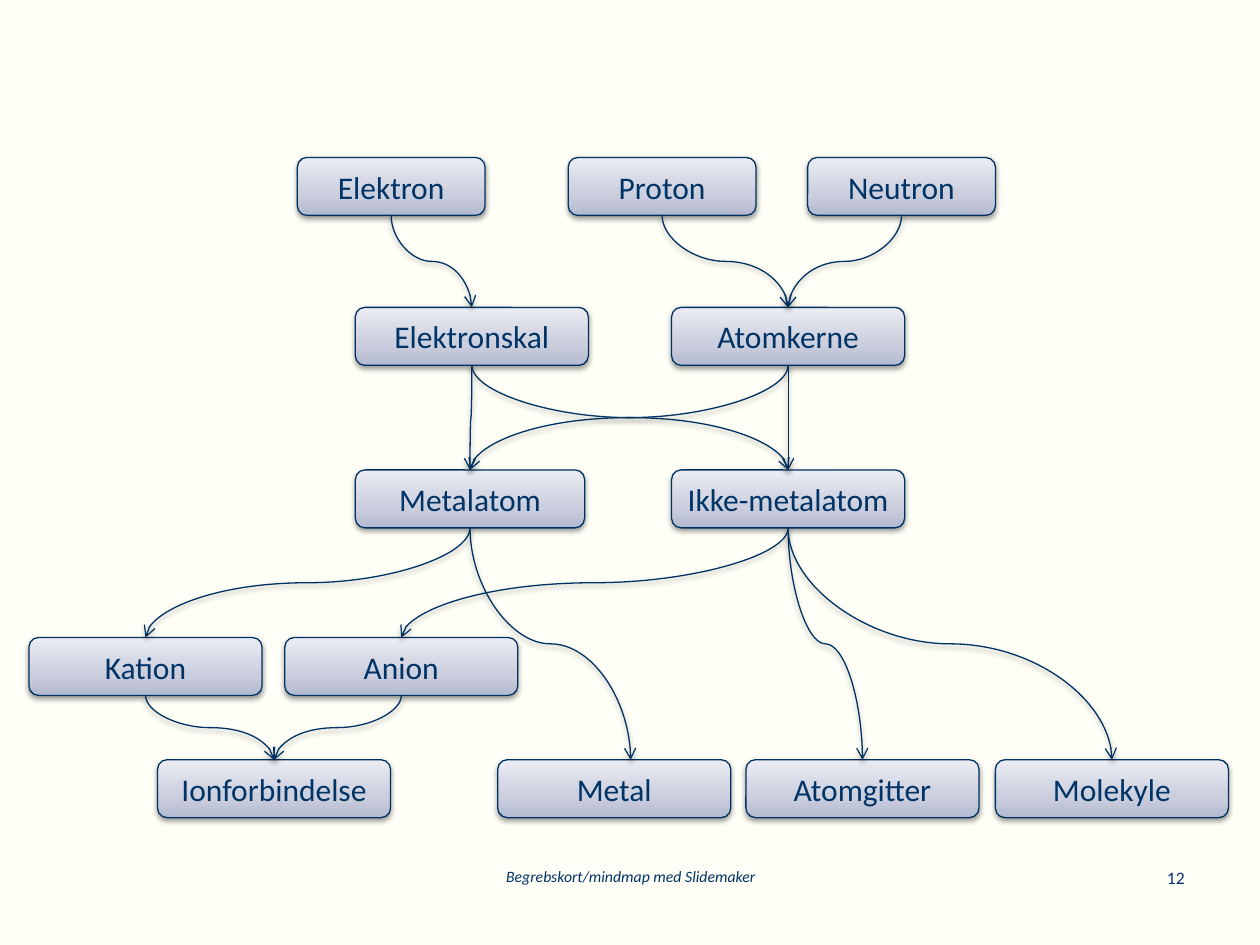
"""Concept map of atoms, ions and compounds joined by curved arrows."""
from pptx import Presentation
from pptx.dml.color import RGBColor
from pptx.enum.shapes import MSO_CONNECTOR, MSO_SHAPE
from pptx.enum.text import MSO_ANCHOR, PP_ALIGN
from pptx.oxml import parse_xml
from pptx.oxml.ns import nsdecls, qn
from pptx.util import Inches, Pt

CREAM = RGBColor(0xFF, 0xFF, 0xF7)
NAVY = RGBColor(0x00, 0x33, 0x66)
OUTLINE = RGBColor(0x00, 0x32, 0x64)
STOPS = [
    (0, RGBColor(0xB3, 0xB9, 0xD0)),
    (35, RGBColor(0xCA, 0xCE, 0xDD)),
    (100, RGBColor(0xEB, 0xEC, 0xF3)),
]
ROUNDED = MSO_SHAPE.ROUNDED_RECTANGLE
CURVE = MSO_CONNECTOR.CURVE
MIDDLE = MSO_ANCHOR.MIDDLE
CENTER, RIGHT = PP_ALIGN.CENTER, PP_ALIGN.RIGHT
BOTTOM_SIDE, TOP_SIDE = 2, 0
BOX_HEIGHT = 0.46

GRADIENT = (
    f'<a:gradFill {nsdecls("a")} rotWithShape="1"><a:gsLst>'
    + "".join(
        f'<a:gs pos="{pos * 1000}"><a:srgbClr val="{color}"/></a:gs>'
        for pos, color in STOPS
    )
    + '</a:gsLst><a:lin ang="16200000" scaled="0"/></a:gradFill>'
)
SHADOW = (
    f'<a:effectLst {nsdecls("a")}>'
    '<a:outerShdw blurRad="40000" dist="20000" dir="5400000" rotWithShape="0">'
    '<a:srgbClr val="000000"><a:alpha val="38000"/></a:srgbClr>'
    "</a:outerShdw></a:effectLst>"
)
ARROWHEAD = f'<a:tailEnd {nsdecls("a")} type="arrow"/>'

ROWS = [
    (1.25, [("Proton", 4.51, 1.49), ("Neutron", 6.41, 1.49), ("Elektron", 2.36, 1.49)]),
    (2.44, [("Atomkerne", 5.33, 1.85), ("Elektronskal", 2.82, 1.85)]),
    (3.73, [("Metalatom", 2.82, 1.82), ("Ikke-metalatom", 5.33, 1.85)]),
    (5.06, [("Kation", 0.23, 1.85), ("Anion", 2.26, 1.85)]),
    (6.03, [("Ionforbindelse", 1.25, 1.85), ("Metal", 3.95, 1.85),
            ("Atomgitter", 5.92, 1.85), ("Molekyle", 7.9, 1.85)]),
]
LINKS = [
    ("Elektron", "Elektronskal"),
    ("Proton", "Atomkerne"),
    ("Neutron", "Atomkerne"),
    ("Atomkerne", "Ikke-metalatom"),
    ("Elektronskal", "Metalatom"),
    ("Atomkerne", "Metalatom"),
    ("Elektronskal", "Ikke-metalatom"),
    ("Metalatom", "Metal"),
    ("Metalatom", "Kation"),
    ("Ikke-metalatom", "Anion"),
    ("Ikke-metalatom", "Atomgitter"),
    ("Ikke-metalatom", "Molekyle"),
    ("Anion", "Ionforbindelse"),
    ("Kation", "Ionforbindelse"),
]
OFF_CENTER = {"Metal": Inches(0.13)}
FOOTERS = [
    ("Begrebskort/mindmap med Slidemaker", 3.42, 3.17, 9, True, CENTER),
    ("12", 7.17, 2.33, 10, False, RIGHT),
]


def write(frame, text, size, align, italic=False):
    frame.text = text
    paragraph = frame.paragraphs[0]
    paragraph.alignment = align
    font = paragraph.runs[0].font
    font.name, font.size, font.italic = "Calibri", Pt(size), italic
    font.color.rgb = NAVY


def outline(item):
    item.line.color.rgb = OUTLINE
    item.line.width = Pt(0.75)
    item._element.spPr.append(parse_xml(SHADOW))


prs = Presentation()
prs.slide_width, prs.slide_height = Inches(10), Inches(7.5)
slide = prs.slides.add_slide(prs.slide_layouts[6])
slide.background.fill.solid()
slide.background.fill.fore_color.rgb = CREAM

for text, left, width, size, italic, align in FOOTERS:
    footer = slide.shapes.add_textbox(
        Inches(left), Inches(6.83), Inches(width), Inches(0.52))
    footer.text_frame.word_wrap = True
    write(footer.text_frame, text, size, align, italic)

concepts = {}
for top, row in ROWS:
    for name, left, width in row:
        concept = slide.shapes.add_shape(
            ROUNDED, Inches(left), Inches(top), Inches(width), Inches(BOX_HEIGHT))
        concept._element.spPr.find(qn("a:prstGeom")).addnext(parse_xml(GRADIENT))
        outline(concept)
        concept.text_frame.vertical_anchor = MIDDLE
        concept.text_frame.word_wrap = False
        write(concept.text_frame, name, 18, CENTER)
        concepts[name] = concept

for source_name, target_name in LINKS:
    source, target = concepts[source_name], concepts[target_name]
    start_x = source.left + source.width // 2
    end_x = target.left + target.width // 2 + OFF_CENTER.get(target_name, 0)
    start_y, end_y = source.top + source.height, target.top
    link = slide.shapes.add_connector(CURVE, start_x, start_y, end_x, end_y)
    link.begin_connect(source, BOTTOM_SIDE)
    if target_name not in OFF_CENTER:
        link.end_connect(target, TOP_SIDE)

    drop, shift = end_y - start_y, abs(end_x - start_x)
    link.left = (start_x + end_x - drop) // 2
    link.top = (start_y + end_y - shift) // 2
    link.width, link.height = drop, shift
    rightward = end_x > start_x
    transform = link._element.spPr.find(qn("a:xfrm"))
    transform.set("rot", "16200000" if rightward else "5400000")
    transform.set("flipH", "1" if rightward else "0")

    outline(link)
    link._element.spPr.find(qn("a:ln")).append(parse_xml(ARROWHEAD))

prs.save("out.pptx")
